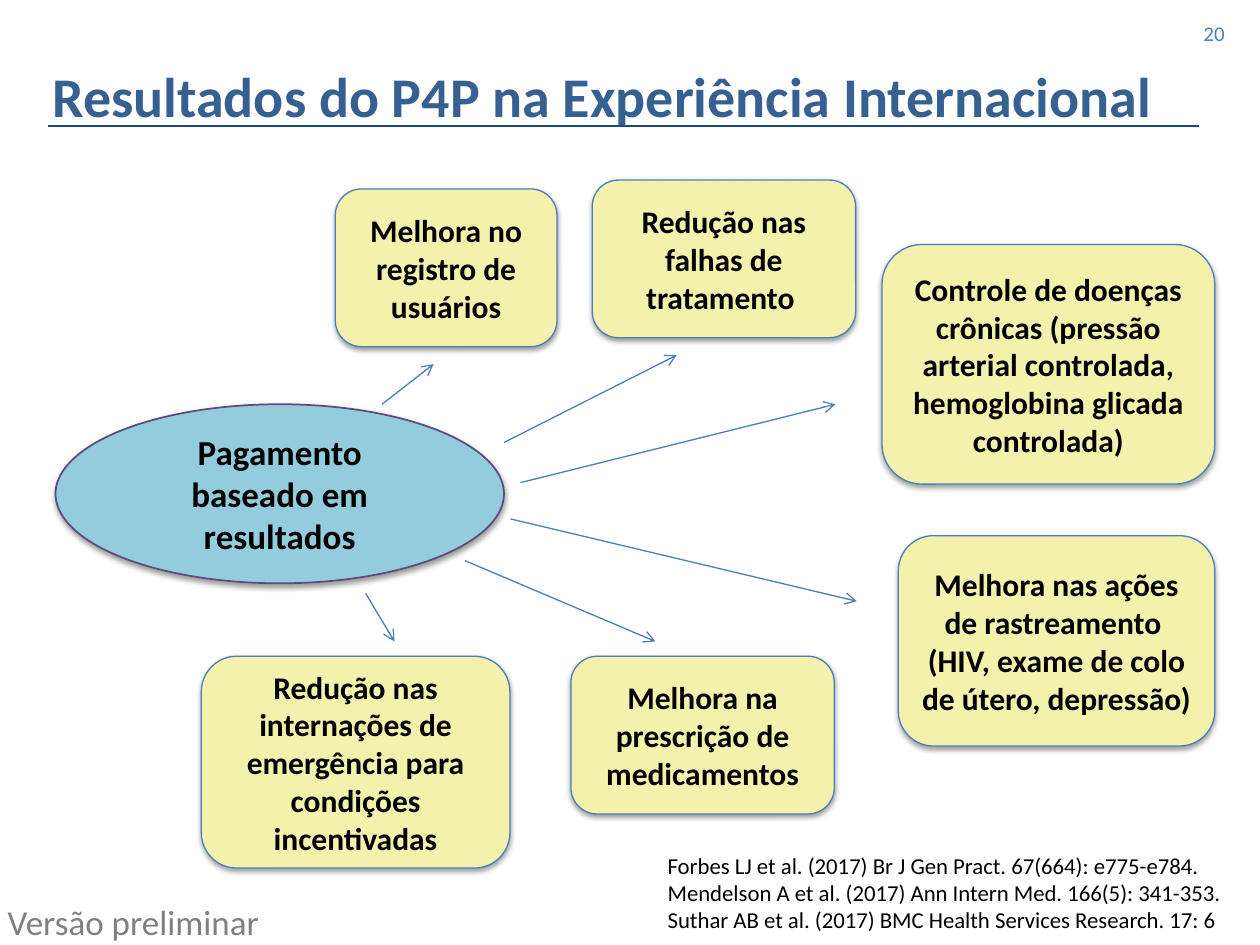
from lxml import etree
from pptx import Presentation
from pptx import util as u
from pptx.dml.color import RGBColor
from pptx.enum import shapes, text
from pptx.oxml.ns import qn

WHITE = RGBColor(0xFF, 0xFF, 0xFF)
BLACK = RGBColor(0x00, 0x00, 0x00)
GRAY = RGBColor(0x80, 0x80, 0x80)
NAVY = RGBColor(0x1F, 0x49, 0x7D)
TITLE_BLUE = RGBColor(0x37, 0x60, 0x92)
NUMBER_BLUE = RGBColor(0x4F, 0x81, 0xBD)
LINE_BLUE = RGBColor(0x4B, 0x7E, 0xBC)
PURPLE = RGBColor(0x60, 0x4A, 0x7B)
AQUA = RGBColor(0x93, 0xCD, 0xDD)
YELLOW = RGBColor(0xF3, 0xF1, 0xAB)

LEFT, CENTER, RIGHT = text.PP_ALIGN.LEFT, text.PP_ALIGN.CENTER, text.PP_ALIGN.RIGHT
TOP, MIDDLE = text.MSO_ANCHOR.TOP, text.MSO_ANCHOR.MIDDLE


def write(shape, lines, size, color, bold=False, align=CENTER, anchor=MIDDLE):
    frame = shape.text_frame
    frame.word_wrap = True
    frame.vertical_anchor = anchor
    for i, line in enumerate(lines):
        paragraph = frame.paragraphs[0] if i == 0 else frame.add_paragraph()
        paragraph.alignment = align
        run = paragraph.add_run()
        run.text = line
        run.font.name = "Calibri"
        run.font.size = u.Pt(size)
        run.font.bold = bold
        run.font.color.rgb = color


def add_line(start, end, color, width, arrow=False):
    line = slide.shapes.add_connector(
        shapes.MSO_CONNECTOR.STRAIGHT, *[u.Cm(v) for v in start + end])
    line.line.color.rgb = color
    line.line.width = u.Pt(width)
    if arrow:
        etree.SubElement(line.line._get_or_add_ln(), qn("a:tailEnd"), type="arrow")
    etree.SubElement(line._element.spPr, qn("a:effectLst"))


prs = Presentation()
prs.slide_width, prs.slide_height = u.Cm(25.4), u.Cm(19.05)
slide = prs.slides.add_slide(prs.slide_layouts[6])

# References
references = slide.shapes.add_textbox(u.Cm(13.21), u.Cm(17.04), u.Cm(12.01), u.Cm(1.93))
references.fill.solid()
references.fill.fore_color.rgb = WHITE
write(references, [
    "Forbes LJ et al. (2017) Br J Gen Pract. 67(664): e775-e784.",
    "Mendelson A et al. (2017) Ann Intern Med. 166(5): 341-353.",
    "Suthar AB et al. (2017) BMC Health Services Research. 17: 6",
], 13, BLACK, align=LEFT, anchor=TOP)

# Central ellipse and the results around it
OVAL, ROUNDED = shapes.MSO_SHAPE.OVAL, shapes.MSO_SHAPE.ROUNDED_RECTANGLE
payment_style = (OVAL, AQUA, PURPLE, 1, 20)
result_style = (ROUNDED, YELLOW, LINE_BLUE, 0.75, 18)
bubbles = [
    (payment_style, (1.12, 8.15, 9.04, 3.61), ["Pagamento baseado em resultados"]),
    (result_style, (17.78, 4.93, 6.71, 4.83),
     ["Controle de doenças crônicas (pressão arterial controlada, "
      "hemoglobina glicada controlada)"]),
    (result_style, (11.94, 3.63, 5.31, 3.18), ["Redução nas falhas de tratamento "]),
    (result_style, (11.51, 13.23, 5.31, 3.18), ["Melhora na prescrição de medicamentos"]),
    (result_style, (18.11, 10.8, 6.38, 4.24),
     ["Melhora nas ações de rastreamento ", "(HIV, exame de colo de útero, depressão)"]),
    (result_style, (4.06, 13.23, 6.22, 4.27),
     ["Redução nas internações de emergência para condições incentivadas"]),
    (result_style, (6.76, 3.81, 4.47, 3.18), ["Melhora no registro de usuários"]),
]
for (outline, fill, edge, width, size), place, lines in bubbles:
    bubble = slide.shapes.add_shape(outline, *[u.Cm(v) for v in place])
    bubble.fill.solid()
    bubble.fill.fore_color.rgb = fill
    bubble.line.color.rgb = edge
    bubble.line.width = u.Pt(width)
    write(bubble, lines, size, BLACK, bold=True)
    # Soft shadow straight below
    bubble.shadow.inherit = False
    effects = bubble._element.spPr.find(qn("a:effectLst"))
    shadow = etree.SubElement(
        effects, qn("a:outerShdw"), blurRad=str(u.Pt(3.1)), dist=str(u.Pt(1.6)),
        dir="5400000", rotWithShape="0")
    shade = etree.SubElement(shadow, qn("a:srgbClr"), val=str(BLACK))
    etree.SubElement(shade, qn("a:alpha"), val="38000")

# Arrows from the payment to each result
arrows = [
    ((7.7, 8.15), (8.74, 7.34)),
    ((10.16, 8.92), (13.64, 7.16)),
    ((10.49, 9.73), (16.84, 8.15)),
    ((10.29, 10.46), (17.27, 12.12)),
    ((9.37, 11.3), (13.21, 12.93)),
    ((7.37, 11.96), (7.95, 12.93)),
]
for start, end in arrows:
    add_line(start, end, LINE_BLUE, 0.75, arrow=True)

# Title and its rule
title = slide.shapes.add_textbox(u.Cm(0.58), u.Cm(0.74), u.Cm(23.39), u.Cm(2.34))
write(title, ["Resultados do P4P na Experiência Internacional "], 32, TITLE_BLUE, bold=True)
add_line((0.97, 2.54), (24.18, 2.54), NAVY, 1)

# Slide number and draft note
number = slide.shapes.add_textbox(u.Cm(19.02), u.Cm(0.15), u.Cm(5.92), u.Cm(1.02))
write(number, ["20"], 12, NUMBER_BLUE, align=RIGHT)
draft = slide.shapes.add_textbox(u.Cm(-0.48), u.Cm(18.03), u.Cm(6.5), u.Cm(1.12))
write(draft, ["Versão preliminar "], 20, GRAY, anchor=TOP)

prs.save("out.pptx")
